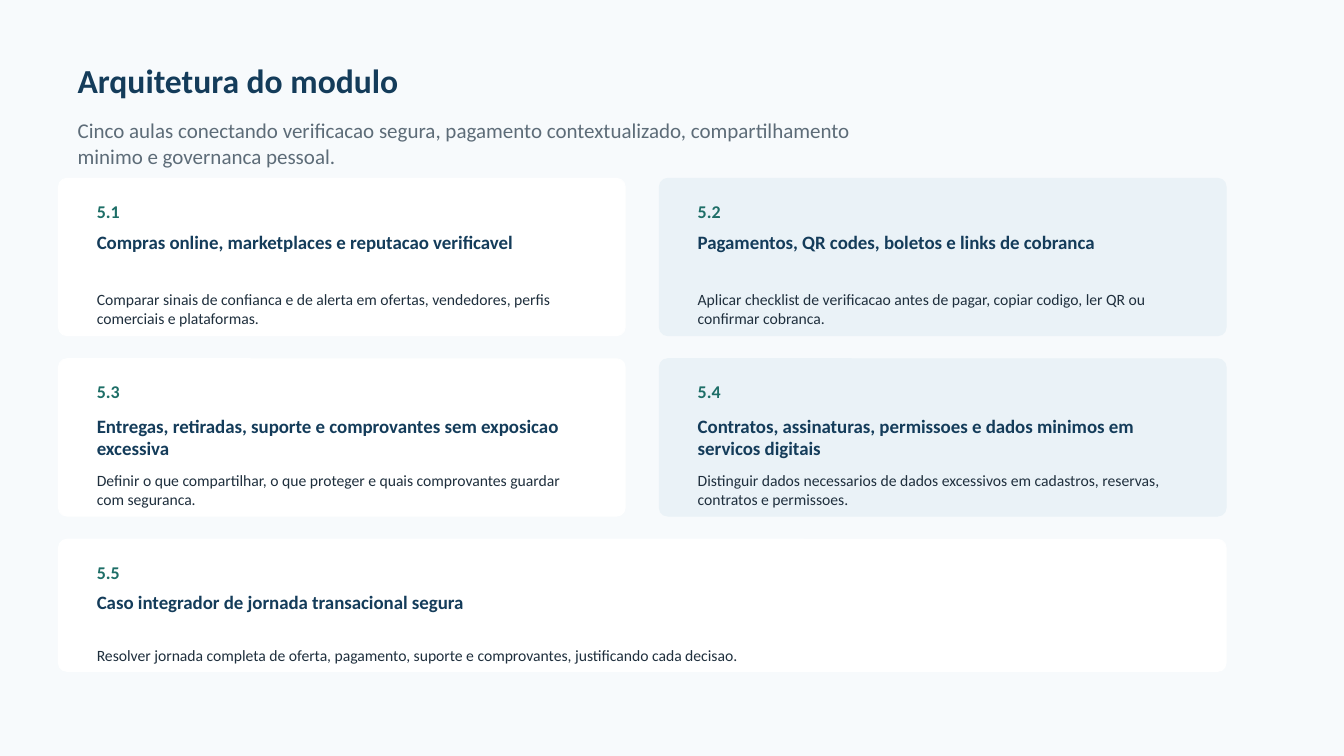
from pptx import Presentation
from pptx.dml.color import RGBColor
from pptx.enum.shapes import MSO_SHAPE
from pptx.enum.text import MSO_ANCHOR
from pptx.util import Inches, Pt

COLORS = {
    "background": "F7FAFC",
    "navy": "143C5A",
    "gray": "5D6C78",
    "teal": "1D6E67",
    "ink": "1F2F3D",
    "white": "FFFFFF",
    "mist": "EAF2F7",
}

LESSONS = [
    ("5.1", "Compras online, marketplaces e reputacao verificavel",
     "Comparar sinais de confianca e de alerta em ofertas, vendedores, "
     "perfis comerciais e plataformas."),
    ("5.2", "Pagamentos, QR codes, boletos e links de cobranca",
     "Aplicar checklist de verificacao antes de pagar, copiar codigo, "
     "ler QR ou confirmar cobranca."),
    ("5.3", "Entregas, retiradas, suporte e comprovantes sem exposicao excessiva",
     "Definir o que compartilhar, o que proteger e quais comprovantes "
     "guardar com seguranca."),
    ("5.4", "Contratos, assinaturas, permissoes e dados minimos em servicos digitais",
     "Distinguir dados necessarios de dados excessivos em cadastros, "
     "reservas, contratos e permissoes."),
    ("5.5", "Caso integrador de jornada transacional segura",
     "Resolver jornada completa de oferta, pagamento, suporte e "
     "comprovantes, justificando cada decisao."),
]

# Card grid, in inches
LEFT, TOP = 0.58, 1.77
COLUMN_STEP, ROW_STEP = 5.96, 1.79
CARD_WIDTH, CARD_HEIGHT = 5.62, 1.56
WIDE_WIDTH, WIDE_HEIGHT = COLUMN_STEP + CARD_WIDTH, 1.31
CORNER_RADIUS = 0.083


class ModuleSlide:
    font = "Calibri"
    inset_x, inset_y = Inches(0.19), Inches(0.15)

    def __init__(self, presentation):
        self.slide = presentation.slides.add_slide(presentation.slide_layouts[6])
        background = self.slide.background.fill
        background.solid()
        background.fore_color.rgb = self.color("background")

    def color(self, name):
        return RGBColor.from_string(COLORS[name])

    def text(self, words, left, top, width, height, size, color, bold=False):
        box = self.slide.shapes.add_textbox(
            Inches(left), Inches(top), Inches(width), Inches(height))
        frame = box.text_frame
        frame.word_wrap = True
        frame.vertical_anchor = MSO_ANCHOR.TOP
        frame.margin_left = frame.margin_right = self.inset_x
        frame.margin_top = frame.margin_bottom = self.inset_y
        run = frame.paragraphs[0].add_run()
        run.text = words
        run.font.name = self.font
        run.font.size = Pt(size)
        run.font.bold = bold
        run.font.color.rgb = self.color(color)

    def panel(self, left, top, width, height, color):
        panel = self.slide.shapes.add_shape(
            MSO_SHAPE.ROUNDED_RECTANGLE,
            Inches(left), Inches(top), Inches(width), Inches(height))
        panel.adjustments[0] = CORNER_RADIUS / min(width, height)
        panel.shadow.inherit = False
        panel.fill.solid()
        panel.fill.fore_color.rgb = self.color(color)
        panel.line.color.rgb = self.color(color)
        panel.line.width = Pt(0)

    def lesson_card(self, lesson, left, top, width, height, color):
        number, title, goal = lesson
        text_left, text_width = left + 0.19, width - 0.37
        self.panel(left, top, width, height, color)
        self.text(number, text_left, top + 0.11, 0.83, 0.35, 12.8, "teal", True)
        self.text(title, text_left, top + 0.4, text_width, 0.58, 13.5, "navy", True)
        self.text(goal, text_left, top + 0.96, text_width, height - 1.04, 11.2, "ink")


def main():
    presentation = Presentation()
    presentation.slide_width = Inches(13.33)
    presentation.slide_height = Inches(7.5)
    module = ModuleSlide(presentation)

    # Heading
    module.text("Arquitetura do modulo", LEFT, 0.44, 6.46, 0.62, 24, "navy", True)
    module.text(
        "Cinco aulas conectando verificacao segura, pagamento contextualizado, "
        "compartilhamento minimo e governanca pessoal.",
        LEFT, 1.02, 8.54, 0.48, 15, "gray")

    # Two-column lessons, with the last one across the full width
    for index, lesson in enumerate(LESSONS):
        row, column = divmod(index, 2)
        is_last = index == len(LESSONS) - 1
        module.lesson_card(
            lesson,
            LEFT + column * COLUMN_STEP,
            TOP + row * ROW_STEP,
            WIDE_WIDTH if is_last else CARD_WIDTH,
            WIDE_HEIGHT if is_last else CARD_HEIGHT,
            "mist" if column else "white")

    presentation.save("out.pptx")


if __name__ == "__main__":
    main()
